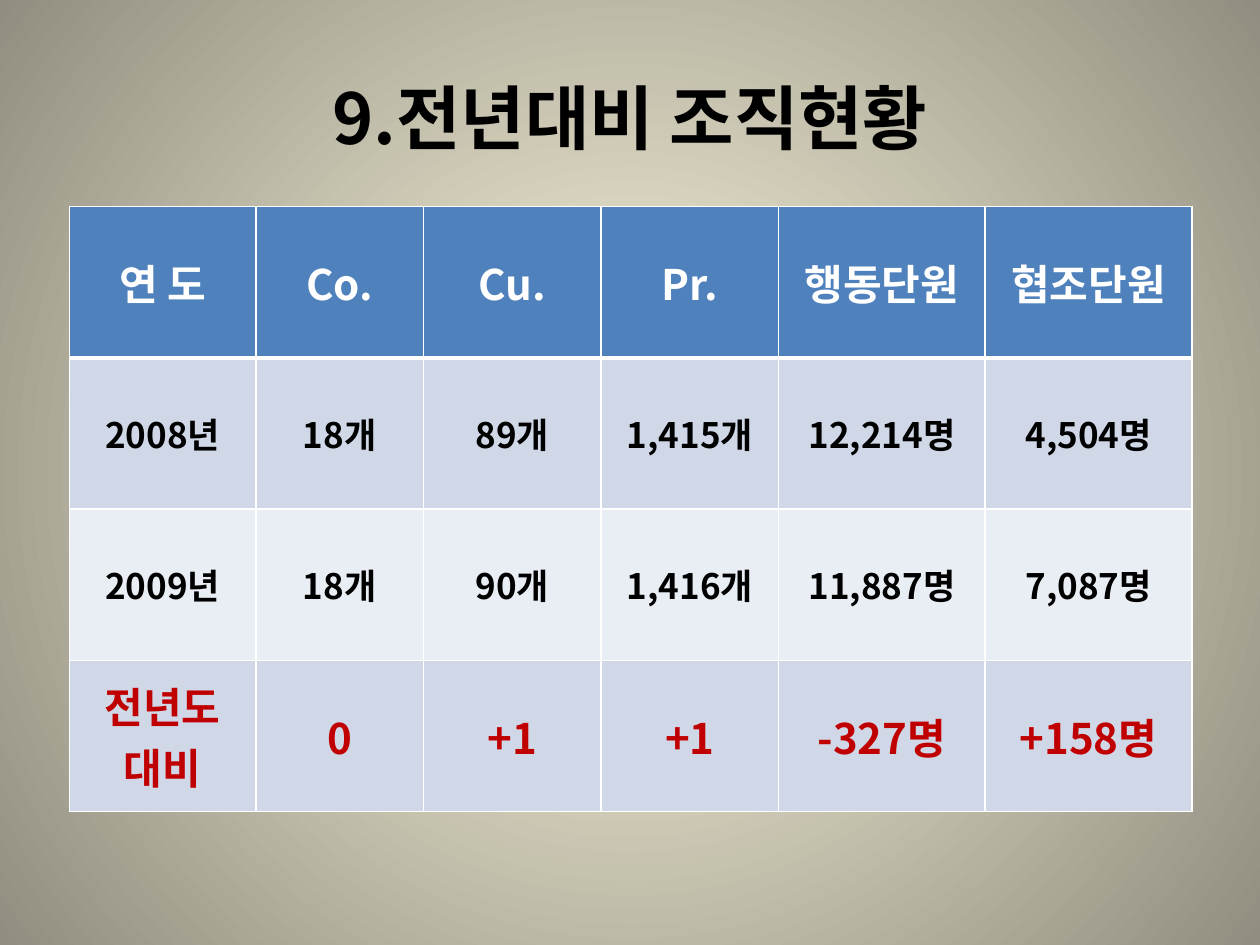
from lxml import etree
from pptx import Presentation, util as u
from pptx.dml.color import RGBColor
from pptx.enum import text as t
from pptx.oxml import ns

FONT = "Noto Sans CJK KR"


def hue(code):
    return RGBColor.from_string(code)


def write(frame, words, size=20, color="000000"):
    frame.word_wrap = True
    frame.text = words
    for para in frame.paragraphs:
        para.alignment = t.PP_ALIGN.CENTER
        for run in para.runs:
            font = run.font
            font.size, font.bold, font.name = u.Pt(size), True, FONT
            font.color.rgb = hue(color)
            east = etree.SubElement(font._element, ns.qn("a:ea"))
            east.set("typeface", FONT)


deck = Presentation()
deck.slide_width, deck.slide_height = u.Inches(10), u.Inches(7.5)
unit = deck.slide_width / 100
slide = deck.slides.add_slide(deck.slide_layouts[6])

back = slide.background.fill
back.gradient()
for stop, code in zip(back.gradient_stops, ["FCF7DD", "918E81"]):
    stop.color.rgb = hue(code)
line = slide.element.find(".//" + ns.qn("a:lin"))
ring = etree.Element(ns.qn("a:path"), {"path": "circle"})
etree.SubElement(ring, ns.qn("a:fillToRect"), dict.fromkeys("ltrb", "50000"))
line.getparent().replace(line, ring)

title = slide.shapes.add_textbox(*[int(n * unit) for n in (5, 3, 90, 12.5)])
title.text_frame.vertical_anchor = t.MSO_ANCHOR.MIDDLE
write(title.text_frame, "9.전년대비 조직현황", size=40)

rows = [
    ["연 도", "Co.", "Cu.", "Pr.", "행동단원", "협조단원"],
    ["2008년", "18개", "89개", "1,415개", "12,214명", "4,504명"],
    ["2009년", "18개", "90개", "1,416개", "11,887명", "7,087명"],
    ["전년도\n대비", "0", "+1", "+1", "-327명", "+158명"],
]
looks = [
    ("4F81BD", 24, "FFFFFF"),
    ("D0D8E8", 20, "000000"),
    ("E9EDF4", 20, "000000"),
    ("D0D8E8", 24, "C00000"),
]
wide = [14.8, 13.3, 14.1, 14.1, 16.4, 16.4]
high = 12
area = (5.5, 16.4, sum(wide), high * len(rows))
grid = slide.shapes.add_table(len(rows), len(wide), *[int(n * unit) for n in area]).table
for col, size in zip(grid.columns, wide):
    col.width = int(size * unit)

for r, (row, (fill, size, color)) in enumerate(zip(rows, looks)):
    grid.rows[r].height = int(high * unit)
    for c, words in enumerate(row):
        cell = grid.cell(r, c)
        cell.vertical_anchor = t.MSO_ANCHOR.MIDDLE
        write(cell.text_frame, words, size=size, color=color)
        prop = cell._tc.get_or_add_tcPr()
        for side in "LRTB":
            thick = 3 if (r, side) in [(0, "B"), (1, "T")] else 1
            edge = etree.SubElement(prop, ns.qn("a:ln" + side), w=str(u.Pt(thick)))
            paint = etree.SubElement(edge, ns.qn("a:solidFill"))
            etree.SubElement(paint, ns.qn("a:srgbClr"), val="FFFFFF")
        cell.fill.solid()
        cell.fill.fore_color.rgb = hue(fill)

deck.save("out.pptx")
